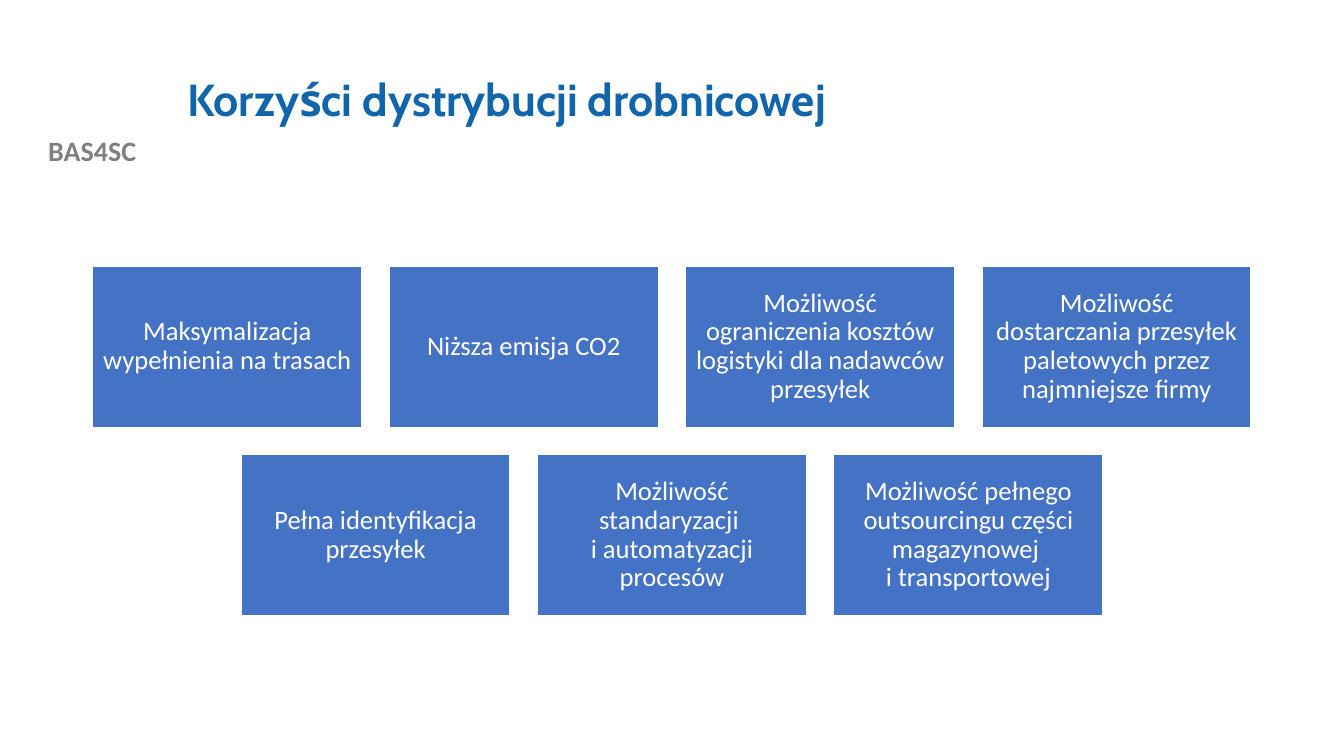
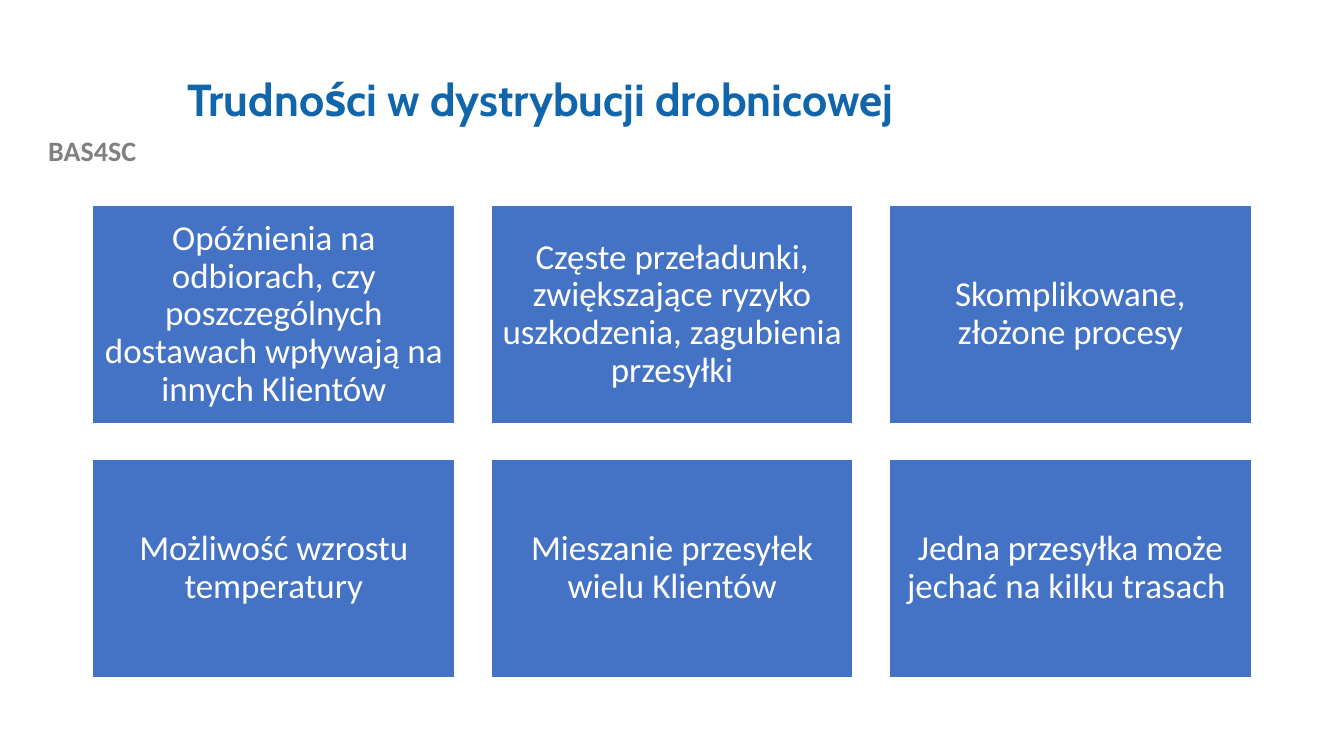
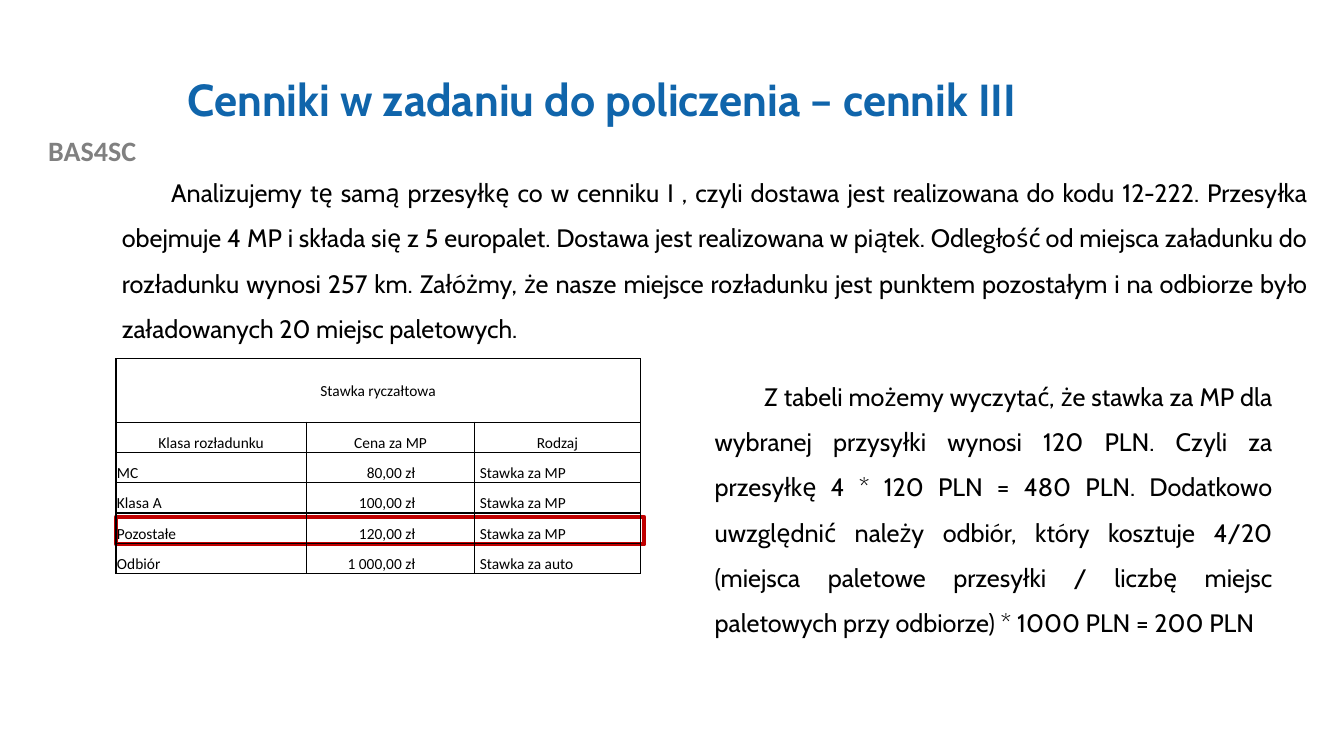
"""Build three slides on groupage distribution: benefits, difficulties and a price list."""
from dataclasses import dataclass

from lxml import etree
from pptx import Presentation
from pptx.dml.color import RGBColor
from pptx.enum import shapes, text
from pptx.oxml.ns import qn
from pptx.util import Inches, Pt


@dataclass(frozen=True)
class Theme:
    """Colours, fonts and type sizes of the deck."""
    blue: RGBColor = RGBColor(0x10, 0x65, 0xAB)
    card: RGBColor = RGBColor(0x44, 0x72, 0xC4)
    gray: RGBColor = RGBColor(0x80, 0x80, 0x80)
    red: RGBColor = RGBColor(0xC0, 0x00, 0x00)
    white: RGBColor = RGBColor(0xFF, 0xFF, 0xFF)
    black: RGBColor = RGBColor(0x00, 0x00, 0x00)
    heading: str = "Cabin"
    body: str = "Calibri"
    title_size: int = 32
    label_size: int = 20
    text_size: int = 18
    table_size: int = 11


THEME = Theme()
ALIGN = text.PP_ALIGN
ANCHOR = text.MSO_ANCHOR
SLIDE_WIDTH = 13.33

BENEFITS = [
    ["Maksymalizacja wypełnienia na trasach",
     "Niższa emisja CO2",
     "Możliwość ograniczenia kosztów logistyki dla nadawców przesyłek",
     "Możliwość dostarczania przesyłek paletowych przez najmniejsze firmy"],
    ["Pełna identyfikacja przesyłek",
     "Możliwość standaryzacji \ni automatyzacji procesów",
     "Możliwość pełnego outsourcingu części magazynowej \ni transportowej"],
]
DIFFICULTIES = [
    ["Opóźnienia na odbiorach, czy poszczególnych dostawach wpływają na innych Klientów",
     "Częste przeładunki, zwiększające ryzyko uszkodzenia, zagubienia przesyłki",
     "Skomplikowane, złożone procesy"],
    ["Możliwość wzrostu temperatury",
     "Mieszanie przesyłek wielu Klientów",
     "Jedna przesyłka może jechać na kilku trasach "],
]
ASSUMPTIONS = (
    "Analizujemy tę samą przesyłkę co w cenniku I , czyli dostawa jest realizowana do kodu "
    "12-222. Przesyłka obejmuje 4 MP i składa się z 5 europalet. Dostawa jest realizowana w "
    "piątek. Odległość od miejsca załadunku do rozładunku wynosi 257 km. Załóżmy, że nasze "
    "miejsce rozładunku jest punktem pozostałym i na odbiorze było załadowanych 20 miejsc "
    "paletowych.")
CALCULATION = (
    "Z tabeli możemy wyczytać, że stawka za MP dla wybranej przysyłki wynosi 120 PLN. Czyli za "
    "przesyłkę 4 * 120 PLN = 480 PLN. Dodatkowo uwzględnić należy odbiór, który kosztuje 4/20 "
    "(miejsca paletowe przesyłki / liczbę miejsc paletowych przy odbiorze) * 1000 PLN = 200 PLN")
PRICES = [
    ["Stawka ryczałtowa", "", ""],
    ["Klasa rozładunku", "Cena za MP", "Rodzaj"],
    ["MC", "80,00 zł", "Stawka za MP"],
    ["Klasa A", "100,00 zł", "Stawka za MP"],
    ["Pozostałe", "120,00 zł", "Stawka za MP"],
    ["Odbiór", "1 000,00 zł", "Stawka za auto"],
]


def write(paragraph, words, font, size, color, align, bold=False, spacing=1.0):
    """Fill and format one paragraph."""
    paragraph.text = words
    paragraph.alignment = align
    paragraph.line_spacing = spacing
    paragraph.font.name = font
    paragraph.font.size = Pt(size)
    paragraph.font.bold = bold
    paragraph.font.color.rgb = color


def add_text_box(slide, left, top, width, height):
    """Add a wrapping text box that grows with its text."""
    box = slide.shapes.add_textbox(Inches(left), Inches(top), Inches(width), Inches(height))
    box.text_frame.word_wrap = True
    box.text_frame.auto_size = text.MSO_AUTO_SIZE.SHAPE_TO_FIT_TEXT
    return box


def add_titled_slide(presentation, layout, words):
    """Add a title-only slide with the deck's title style."""
    slide = presentation.slides.add_slide(layout)
    title = slide.shapes.title
    title.left, title.top = Inches(1.76), Inches(0.4)
    title.width, title.height = Inches(10.66), Inches(1.22)
    title.text_frame.vertical_anchor = ANCHOR.MIDDLE
    write(title.text_frame.paragraphs[0], words, THEME.heading, THEME.title_size, THEME.blue,
          ALIGN.LEFT, bold=True, spacing=0.9)
    return slide


def clear_footers(layout):
    """Keep only the title placeholder on the layout."""
    for placeholder in list(layout.placeholders):
        if placeholder.placeholder_format.type != shapes.PP_PLACEHOLDER.TITLE:
            layout.shapes.element.remove(placeholder.element)


def move_label_to_layout(slide, layout):
    """Put the project label on the layout shared by all slides."""
    label = add_text_box(slide, 0, 1.28, 1.83, 0.44)
    write(label.text_frame.paragraphs[0], "BAS4SC", THEME.body, THEME.label_size, THEME.gray,
          ALIGN.CENTER, bold=True)
    layout.shapes.element.append(label.element)


def add_rectangle(slide, left, top, width, height, line_color, line_width, fill=None):
    """Add a rectangle, hollow unless a fill is given."""
    rectangle = slide.shapes.add_shape(shapes.MSO_SHAPE.RECTANGLE, Inches(left), Inches(top),
                                       Inches(width), Inches(height))
    rectangle.shadow.inherit = False
    rectangle.line.color.rgb = line_color
    rectangle.line.width = Pt(line_width)
    if fill is None:
        rectangle.fill.background()
    else:
        rectangle.fill.solid()
        rectangle.fill.fore_color.rgb = fill
    return rectangle


def add_card_grid(slide, rows, top, width, height, gap, size, inset):
    """Add rows of cards, each row centred on the slide."""
    for row_index, row in enumerate(rows):
        left = (SLIDE_WIDTH - len(row) * width - (len(row) - 1) * gap) / 2
        for column_index, words in enumerate(row):
            card = add_rectangle(slide, left + column_index * (width + gap),
                                 top + row_index * (height + gap), width, height,
                                 THEME.white, 1, THEME.card)
            frame = card.text_frame
            frame.word_wrap = True
            frame.vertical_anchor = ANCHOR.MIDDLE
            frame.margin_left = frame.margin_right = Inches(inset)
            frame.margin_top = frame.margin_bottom = Inches(inset)
            write(frame.paragraphs[0], words, THEME.body, size, THEME.white, ALIGN.CENTER,
                  spacing=0.9)


def add_justified_text(slide, words, left, top, width, height):
    """Add a justified paragraph with an indented first line."""
    paragraph = add_text_box(slide, left, top, width, height).text_frame.paragraphs[0]
    write(paragraph, words, THEME.heading, THEME.text_size, THEME.black, ALIGN.JUSTIFY,
          spacing=1.5)
    paragraph.space_after = Pt(6)
    properties = paragraph._p.get_or_add_pPr()
    properties.set("marL", "0")
    properties.set("indent", str(Inches(0.49)))


def set_borders(cell):
    """Draw thin black lines round a cell."""
    properties = cell._tc.get_or_add_tcPr()
    for index, side in enumerate(("a:lnL", "a:lnR", "a:lnT", "a:lnB")):
        line = etree.Element(qn(side), w=str(Pt(1)))
        fill = etree.SubElement(line, qn("a:solidFill"))
        etree.SubElement(fill, qn("a:srgbClr"), val=str(THEME.black))
        properties.insert(index, line)


def add_price_table(slide, left, top, widths, heights):
    """Add the price list with a merged heading row."""
    table = slide.shapes.add_table(len(heights), len(widths), Inches(left), Inches(top),
                                   Inches(sum(widths)), Inches(sum(heights))).table
    table.first_row = table.horz_banding = False
    for column, width in zip(table.columns, widths):
        column.width = Inches(width)
    for row, height in zip(table.rows, heights):
        row.height = Inches(height)
    body_columns = [(ALIGN.LEFT, 0.01, 0.01), (ALIGN.RIGHT, 0.01, 0.59), (ALIGN.LEFT, 0.05, 0.01)]
    for row_index, row in enumerate(PRICES):
        for column_index, words in enumerate(row):
            cell = table.cell(row_index, column_index)
            align, left_inset, right_inset = (
                body_columns[column_index] if row_index > 1 else (ALIGN.CENTER, 0.01, 0.01))
            cell.margin_left, cell.margin_right = Inches(left_inset), Inches(right_inset)
            cell.margin_top, cell.margin_bottom = Inches(0.01), 0
            cell.vertical_anchor = ANCHOR.BOTTOM if row_index else ANCHOR.MIDDLE
            cell.fill.background()
            set_borders(cell)
            write(cell.text_frame.paragraphs[0], words, THEME.body, THEME.table_size,
                  THEME.black, align)
    table.cell(0, 0).merge(table.cell(0, len(widths) - 1))


def main():
    """Build and save the deck."""
    presentation = Presentation()
    presentation.slide_width, presentation.slide_height = Inches(SLIDE_WIDTH), Inches(7.5)
    layout = presentation.slide_layouts.get_by_name("Title Only")
    clear_footers(layout)

    benefits = add_titled_slide(presentation, layout, "Korzyści dystrybucji drobnicowej")
    move_label_to_layout(benefits, layout)
    add_card_grid(benefits, BENEFITS, top=2.64, width=2.67, height=1.6, gap=0.27, size=19,
                  inset=0.08)

    difficulties = add_titled_slide(presentation, layout, "Trudności w dystrybucji drobnicowej")
    add_card_grid(difficulties, DIFFICULTIES, top=2.04, width=3.59, height=2.16, gap=0.36,
                  size=25, inset=0.1)

    prices = add_titled_slide(presentation, layout, "Cenniki w zadaniu do policzenia – cennik III")
    add_justified_text(prices, ASSUMPTIONS, 1.11, 1.56, 11.96, 1.86)
    add_rectangle(prices, 1.15, 5.13, 5.24, 0.27, THEME.red, 3)
    add_justified_text(prices, CALCULATION, 6.99, 3.58, 5.73, 3.3)
    add_price_table(prices, 1.15, 3.56, [1.89, 1.67, 1.64], [0.63] + [0.3] * 5)

    presentation.save("out.pptx")


if __name__ == "__main__":
    main()
